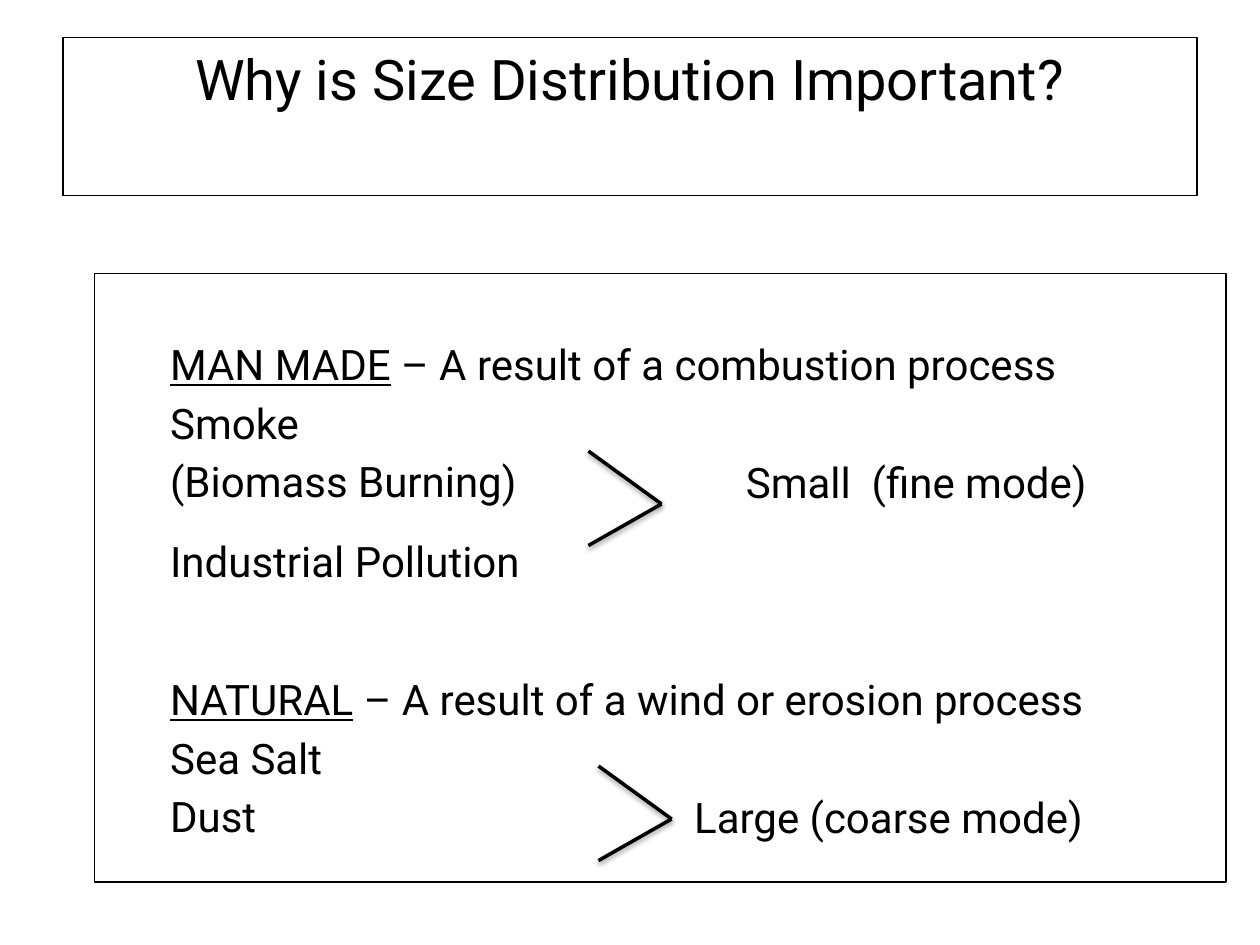
import pptx
import pptx.dml.color
import pptx.enum.shapes
import pptx.enum.text
import pptx.oxml
import pptx.oxml.ns
import pptx.util

INK = pptx.dml.color.RGBColor(0, 0, 0)
PAPER = pptx.dml.color.RGBColor(255, 255, 255)
FONT = "Roboto"
NS = pptx.oxml.ns.nsdecls("a")
SHADE = (
    f'<a:effectLst {NS}><a:outerShdw blurRad="39370" dist="20320" dir="5400000" rotWithShape="0">'
    '<a:srgbClr val="000000"><a:alpha val="38000"/></a:srgbClr></a:outerShdw></a:effectLst>'
)
Inches = pptx.util.Inches
Pt = pptx.util.Pt


def frame(box, left, top, width, height):
    box.left, box.top = Inches(left), Inches(top)
    box.width, box.height = Inches(width), Inches(height)
    box.fill.solid()
    box.fill.fore_color.rgb = PAPER
    box.line.color.rgb = INK
    box.line.width = Pt(0.75)
    text = box.text_frame
    text.word_wrap = True
    text.auto_size = pptx.enum.text.MSO_AUTO_SIZE.NONE
    text.vertical_anchor = pptx.enum.text.MSO_ANCHOR.TOP
    return text


def write(para, words, size, under=False):
    run = para.add_run()
    run.text = words
    run.font.name = FONT
    run.font.size = Pt(size)
    run.font.color.rgb = INK
    run.font.underline = under


deck = pptx.Presentation()
deck.slide_width, deck.slide_height = Inches(10), Inches(7.5)
slide = deck.slides.add_slide(deck.slide_layouts[1])

title = frame(slide.shapes.title, 0.5, 0.3, 9, 1.25)
title.paragraphs[0].alignment = pptx.enum.text.PP_ALIGN.CENTER
write(title.paragraphs[0], "Why is Size Distribution Important?", 32)

body = frame(slide.placeholders[1], 0.75, 2.17, 8.98, 4.83)
body.margin_left = Inches(0.6)
body.margin_top = Inches(0.52)

LINES = [
    ("MAN MADE", " – A result of a combustion process", 0, 0),
    ("", "Smoke", 4.6, 0),
    ("", "(Biomass Burning)", 4.6, 12),
    ("", "Industrial Pollution", 4.6, 12),
    ("NATURAL", " – A result of a wind or erosion process", 38.4, 0),
    ("", "Sea Salt", 4.6, 0),
    ("", "Dust", 4.6, 0),
]
for row, (head, words, before, after) in enumerate(LINES):
    para = body.paragraphs[0] if row == 0 else body.add_paragraph()
    para.space_before, para.space_after = Pt(before), Pt(after)
    props = para._p.get_or_add_pPr()
    props.set("marL", "0")
    props.set("indent", "0")
    props.append(pptx.oxml.parse_xml(f"<a:buNone {NS}/>"))
    if head:
        write(para, head, 24, True)
    write(para, words, 24)

MODES = [
    ("Small  (fine mode)", 5.92, 3.62, 4.67, 3.58),
    ("Large (coarse mode)", 5.51, 6.28, 4.75, 6.08),
]
for words, x, y, left, top in MODES:
    label = slide.shapes.add_textbox(Inches(x), Inches(y), Inches(3.4), Inches(0.45))
    text = label.text_frame
    text.word_wrap = True
    text.margin_left = text.margin_top = text.margin_right = text.margin_bottom = 0
    write(text.paragraphs[0], words, 24)

    group = slide.shapes.add_group_shape()
    for drop in (0, 0.75):
        line = group.shapes.add_connector(
            pptx.enum.shapes.MSO_CONNECTOR.STRAIGHT,
            Inches(left), Inches(top + drop), Inches(left + 0.58), Inches(top + 0.42),
        )
        line.line.color.rgb = INK
        line.line.width = Pt(2)
        line._element.spPr.append(pptx.oxml.parse_xml(SHADE))

deck.save("out.pptx")
